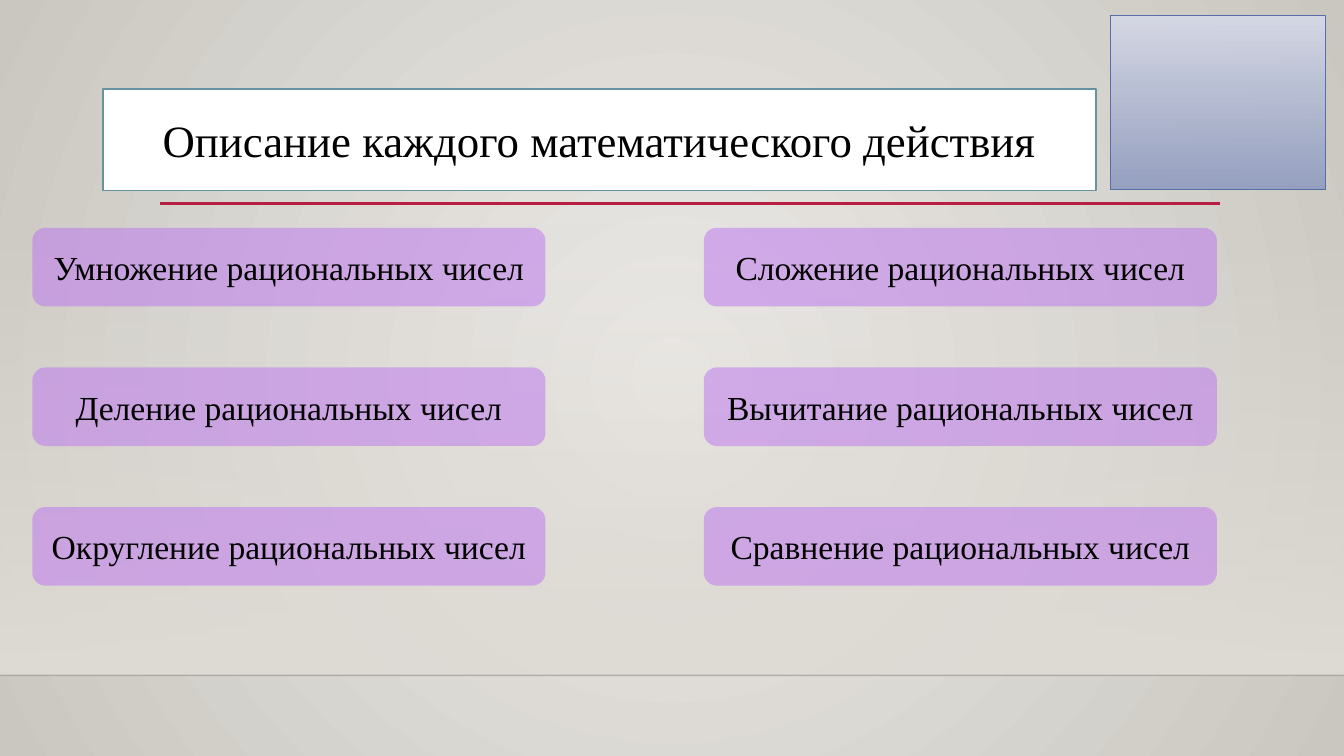
import pptx
import pptx.dml.color
import pptx.enum.shapes
import pptx.enum.text
import pptx.oxml
import pptx.oxml.ns
import pptx.util
from pptx.util import Inches

FONT = "Times New Roman"
SLIDE_WIDTH, SLIDE_HEIGHT = 13.33, 7.5
BUTTON_WIDTH, BUTTON_HEIGHT = 5.09, 0.78
COLUMN_LEFTS = (0.32, 6.98)
FIRST_ROW, LAST_ROW = 2.26, 5.03
OPERATIONS = [
    ("Умножение рациональных чисел", "Сложение рациональных чисел"),
    ("Деление рациональных чисел", "Вычитание рациональных чисел"),
    ("Округление рациональных чисел", "Сравнение рациональных чисел"),
]
qn = pptx.oxml.ns.qn


def rgb(color):
    return pptx.dml.color.RGBColor.from_string(color)


def set_opacity(color_element, percent):
    alpha = color_element.makeelement(qn("a:alpha"), {"val": str(percent * 1000)})
    color_element.append(alpha)


def paint(fill, color):
    fill.solid()
    fill.fore_color.rgb = rgb(color)


def set_gradient(owner, fill, stops, radial=False):
    """Stops are (position, colour, opacity), positions in percent."""
    fill.gradient()
    gradient = owner.find(".//" + qn("a:gradFill"))
    for child in list(gradient):
        gradient.remove(child)
    stop_xml = "".join(
        f'<a:gs pos="{position * 1000}"><a:srgbClr val="{color}">'
        f'<a:alpha val="{opacity * 1000}"/></a:srgbClr></a:gs>'
        for position, color, opacity in stops
    )
    namespace = pptx.oxml.ns.nsdecls("a")
    gradient.append(pptx.oxml.parse_xml(f"<a:gsLst {namespace}>{stop_xml}</a:gsLst>"))
    if radial:
        direction = (
            f'<a:path {namespace} path="circle">'
            '<a:fillToRect l="50000" t="50000" r="50000" b="50000"/></a:path>'
        )
    else:
        direction = f'<a:lin {namespace} ang="5400000" scaled="0"/>'
    gradient.append(pptx.oxml.parse_xml(direction))


def write_text(shape, text, size, color="000000"):
    frame = shape.text_frame
    frame.word_wrap = True
    frame.auto_size = pptx.enum.text.MSO_AUTO_SIZE.NONE
    frame.vertical_anchor = pptx.enum.text.MSO_ANCHOR.MIDDLE
    paragraph = frame.paragraphs[0]
    paragraph.alignment = pptx.enum.text.PP_ALIGN.CENTER
    run = paragraph.add_run()
    run.text = text
    run.font.name = FONT
    run.font.size = pptx.util.Pt(size)
    run.font.color.rgb = rgb(color)


def set_outline(line, color, width):
    paint(line.fill, color)
    line.width = pptx.util.Pt(width)


def add_panel(slide, left, top, width, height, stops):
    panel = slide.shapes.add_shape(
        pptx.enum.shapes.MSO_SHAPE.RECTANGLE,
        Inches(left), Inches(top), Inches(width), Inches(height))
    panel.shadow.inherit = False
    panel.line.fill.background()
    set_gradient(panel.element.spPr, panel.fill, stops)
    return panel


def add_rule(slide, left, right, y, color, width, opacity=100):
    rule = slide.shapes.add_connector(
        pptx.enum.shapes.MSO_CONNECTOR.STRAIGHT,
        Inches(left), Inches(y), Inches(right), Inches(y))
    set_outline(rule.line, color, width)
    properties = rule.element.spPr
    set_opacity(properties.find(".//" + qn("a:srgbClr")), opacity)
    properties.append(properties.makeelement(qn("a:effectLst"), {}))


def add_operation(slide, left, top, text):
    button = slide.shapes.add_shape(
        pptx.enum.shapes.MSO_SHAPE.ROUNDED_RECTANGLE,
        Inches(left), Inches(top), Inches(BUTTON_WIDTH), Inches(BUTTON_HEIGHT))
    button.shadow.inherit = False
    button.line.fill.background()
    paint(button.fill, "BC72F0")
    set_opacity(button.element.spPr.find(".//" + qn("a:srgbClr")), 50)
    write_text(button, text, size=24)


def set_title(slide, text):
    title = slide.shapes.title
    title.left, title.top = Inches(1.02), Inches(0.88)
    title.width, title.height = Inches(9.85), Inches(1.01)
    paint(title.fill, "FFFFFF")
    set_outline(title.line, "6892A0", 1.25)
    write_text(title, text, size=32)


def main():
    deck = pptx.Presentation()
    deck.slide_width, deck.slide_height = Inches(SLIDE_WIDTH), Inches(SLIDE_HEIGHT)
    slide = deck.slides.add_slide(deck.slide_layouts[5])

    # Backdrop and rules
    set_gradient(slide.element, slide.background.fill,
                 [(0, "ECEAE7", 100), (100, "CAC7C1", 100)], radial=True)
    add_panel(slide, 0, 2.21, SLIDE_WIDTH, 4.49,
              [(0, "DFDBD5", 0), (100, "DFDBD5", 100)])
    add_rule(slide, 0, SLIDE_WIDTH, 6.7, "000001", 1, opacity=20)
    add_rule(slide, 1.59, 12.1, 2.02, "B71E42", 2.5)

    # Heading and corner square
    set_title(slide, "Описание каждого математического действия")
    corner = add_panel(slide, 11.01, 0.15, 2.14, 1.73,
                       [(0, "D6D9E5", 100), (100, "929DC0", 92)])
    set_outline(corner.line, "586EA6", 0.75)

    # Grid of operations
    row_step = (LAST_ROW - FIRST_ROW) / (len(OPERATIONS) - 1)
    for row, names in enumerate(OPERATIONS):
        for left, name in zip(COLUMN_LEFTS, names):
            add_operation(slide, left, FIRST_ROW + row * row_step, name)

    deck.save("out.pptx")


if __name__ == "__main__":
    main()
